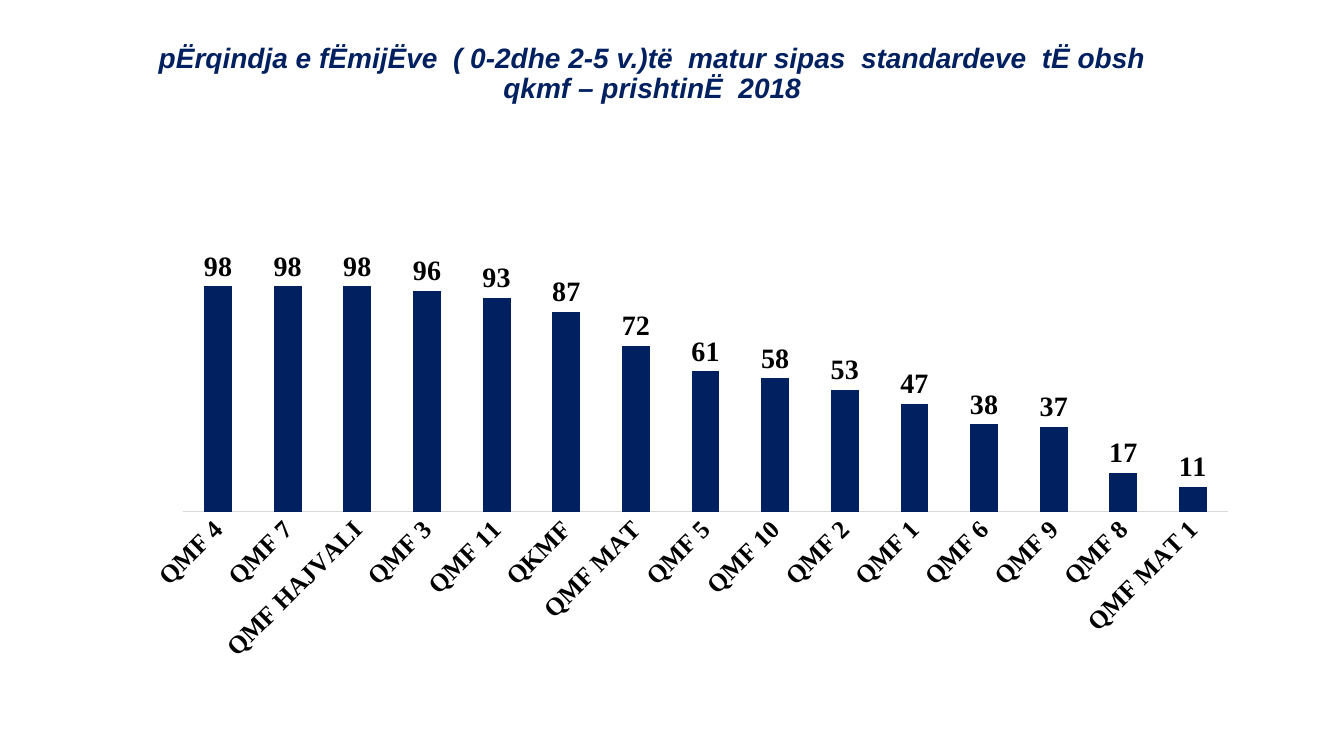
from pptx import Presentation
from pptx.chart.data import CategoryChartData
from pptx.dml.color import RGBColor
from pptx.enum.chart import XL_CHART_TYPE, XL_LABEL_POSITION, XL_TICK_LABEL_POSITION, XL_TICK_MARK
from pptx.enum.text import MSO_ANCHOR, MSO_AUTO_SIZE, PP_ALIGN
from pptx.oxml.ns import qn
from pptx.util import Inches, Pt

COLUMNS = XL_CHART_TYPE.COLUMN_CLUSTERED
OUTSIDE_END = XL_LABEL_POSITION.OUTSIDE_END
NEXT_TO_AXIS = XL_TICK_LABEL_POSITION.NEXT_TO_AXIS
NO_TICK = XL_TICK_MARK.NONE
MIDDLE, CENTER, NO_AUTOFIT = MSO_ANCHOR.MIDDLE, PP_ALIGN.CENTER, MSO_AUTO_SIZE.NONE

SLIDE_SIZE = 13.33, 7.5
TITLE_BOX = 0.23, 0.14, 12.48, 1.19
CHART_BOX = 1.3, 2.25, 11.1, 4.4

NAVY, BLACK, GREY = "002060", "000000", "D9D9D9"
SERIF = "Times New Roman"

TITLE = ("pËrqindja e fËmijËve  ( 0-2dhe 2-5 v.)të  matur sipas  standardeve  tË obsh\v"
         "qkmf – prishtinË  2018")
MEASURED = {
    "QMF 4": 98, "QMF 7": 98, "QMF HAJVALI": 98, "QMF 3": 96, "QMF 11": 93,
    "QKMF": 87, "QMF MAT": 72, "QMF 5": 61, "QMF 10": 58, "QMF 2": 53,
    "QMF 1": 47, "QMF 6": 38, "QMF 9": 37, "QMF 8": 17, "QMF MAT 1": 11,
}


def rgb(color):
    return RGBColor.from_string(color)


def apply(target, **values):
    for name, value in values.items():
        setattr(target, name, value)


def style_font(font, color, **values):
    apply(font, **values)
    font.color.rgb = rgb(color)


def place_title(title, box):
    left, top, width, height = map(Inches, box)
    apply(title, left=left, top=top, width=width, height=height)
    frame = title.text_frame
    frame.text = TITLE
    apply(frame, vertical_anchor=MIDDLE, word_wrap=True, auto_size=NO_AUTOFIT)
    paragraph = frame.paragraphs[0]
    apply(paragraph, alignment=CENTER, line_spacing=0.9)
    for run in paragraph.runs:
        style_font(run.font, NAVY, name="Arial", size=Pt(20), bold=True, italic=True)


def style_axes(chart):
    apply(chart.value_axis, visible=False, has_major_gridlines=False,
          minimum_scale=0, maximum_scale=120)
    centres = chart.category_axis
    apply(centres, major_tick_mark=NO_TICK, minor_tick_mark=NO_TICK,
          tick_label_position=NEXT_TO_AXIS)
    style_font(centres.tick_labels.font, BLACK, name=SERIF, size=Pt(18), bold=True)
    centres._element.find(qn("c:txPr")).find(qn("a:bodyPr")).set("rot", str(-45 * 60000))
    centres.format.line.color.rgb = rgb(GREY)
    centres.format.line.width = Pt(0.75)


def add_measured_chart(slide, box):
    data = CategoryChartData(number_format="0")
    data.categories = list(MEASURED)
    data.add_series("Series 1", list(MEASURED.values()))
    chart = slide.shapes.add_chart(COLUMNS, *map(Inches, box), data).chart
    apply(chart, has_legend=False, has_title=False)
    style_font(chart.font, BLACK, name="Calibri", size=Pt(10))
    style_axes(chart)

    bars = chart.plots[0]
    apply(bars, gap_width=150, overlap=-25, vary_by_categories=False)
    fill = bars.series[0].format.fill
    fill.solid()
    fill.fore_color.rgb = rgb(NAVY)
    labels = bars.series[0].data_labels
    apply(labels, show_value=True, position=OUTSIDE_END)
    style_font(labels.font, BLACK, name=SERIF, size=Pt(20), bold=True)


def main():
    deck = Presentation()
    deck.slide_width, deck.slide_height = map(Inches, SLIDE_SIZE)
    slide = deck.slides.add_slide(deck.slide_layouts.get_by_name("Title Only"))
    place_title(slide.shapes.title, TITLE_BOX)
    add_measured_chart(slide, CHART_BOX)
    deck.save("out.pptx")


if __name__ == "__main__":
    main()
